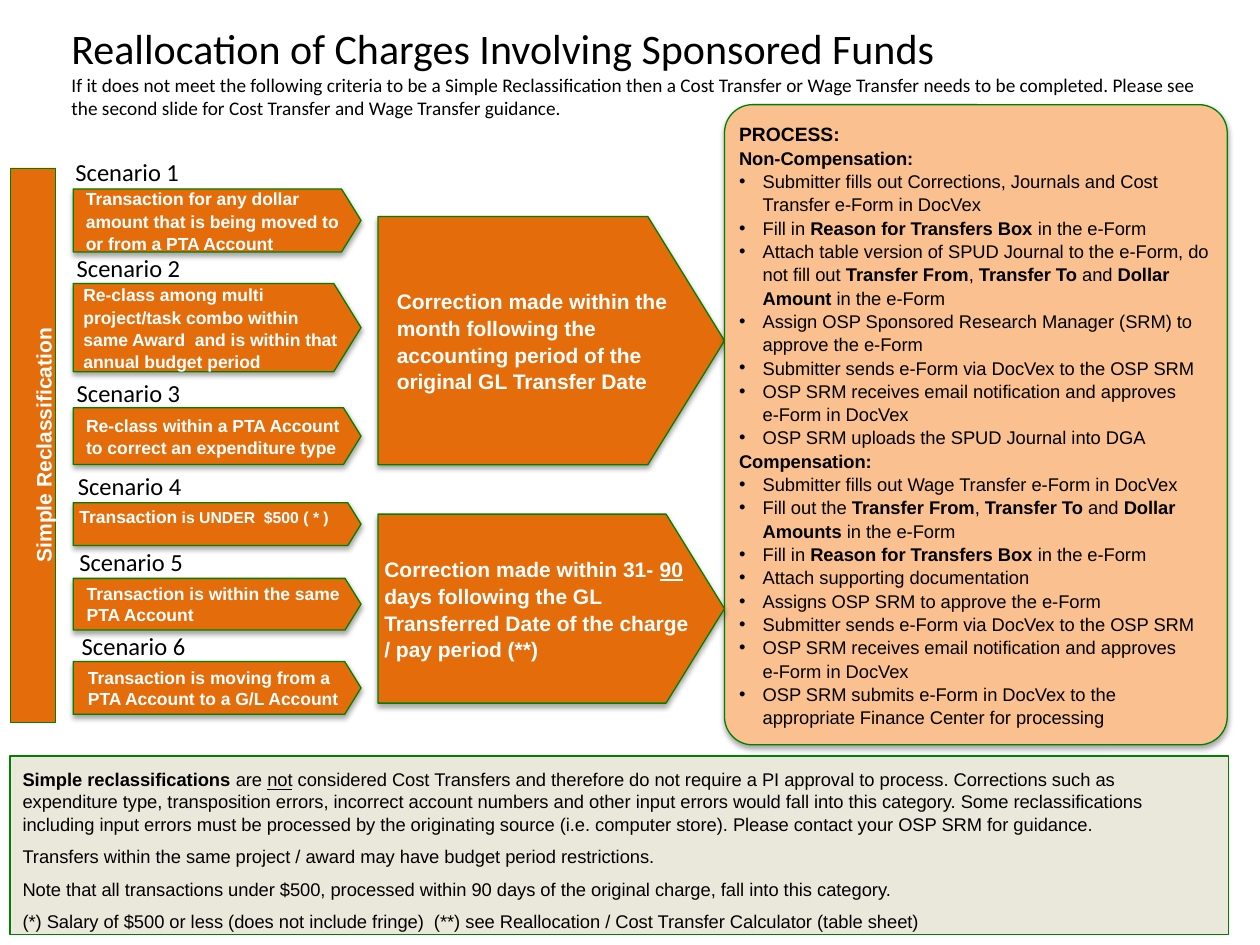
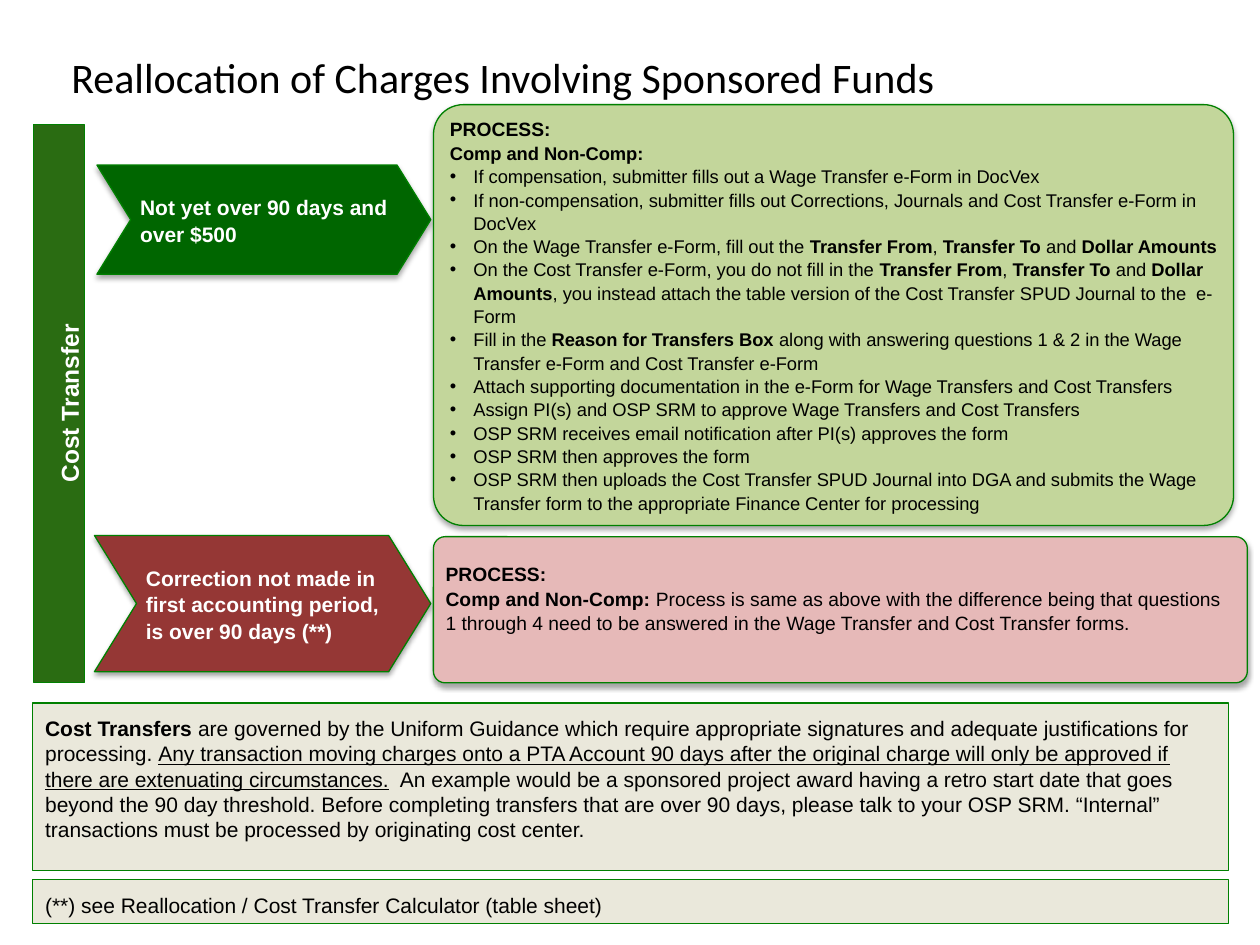
from lxml import etree
from pptx import Presentation
from pptx.dml.color import RGBColor
from pptx.enum.shapes import MSO_SHAPE
from pptx.enum.text import MSO_ANCHOR, PP_ALIGN
from pptx.oxml.ns import qn
from pptx.util import Pt

RECT, ROUNDED = MSO_SHAPE.RECTANGLE, MSO_SHAPE.ROUNDED_RECTANGLE
PENTAGON, CHEVRON = MSO_SHAPE.PENTAGON, MSO_SHAPE.CHEVRON
TOP, MIDDLE = MSO_ANCHOR.TOP, MSO_ANCHOR.MIDDLE
CENTER, LEFT = PP_ALIGN.CENTER, PP_ALIGN.LEFT

COLORS = {
    "text": "000000", "white": "FFFFFF", "outline": "008000",
    "orange": "E46C0A", "peach": "FAC090", "note": "DDD9C3",
    "band_green": "2A6C12", "arrow_green": "006600", "light_green": "C3D69B",
    "dark_red": "953735", "pink": "E6B9B8",
}
TITLE = "Reallocation of Charges Involving Sponsored Funds"
TITLE_NOTE = (
    "If it does not meet the following criteria to be a Simple Reclassification then a Cost "
    "Transfer or Wage Transfer needs to be completed. Please see the second slide for Cost "
    "Transfer and Wage Transfer guidance."
)
BODY_SPACING = 1.06
ARROW_POINT = 0.309
BULLET_INDENT = 13.5

# label left, label top, arrow top, arrow height, line spacing, arrow text
SCENARIOS = [
    (36, 86.4, 108, 36, BODY_SPACING,
     "Transaction for any dollar amount that is being moved to or from a PTA Account"),
    (36.7, 141.1, 162, 50.4, BODY_SPACING,
     "Re-class among multi project/task combo within same Award  and is within that "
     "annual budget period"),
    (36.7, 212.4, 233, 32.4, BODY_SPACING,
     "Re-class within a PTA Account to correct an expenditure type"),
    (37.4, 265.7, 287.3, 24.5, BODY_SPACING, "Transaction"),
    (38.2, 308.9, 330.5, 29.5, 1, "Transaction is within the same PTA Account"),
    (39.6, 357.1, 378, 30.2, 1, "Transaction is moving from a PTA Account to a G/L Account"),
]
SIMPLE_PROCESS = [
    "|PROCESS:|",
    "|Non-Compensation:|",
    "•Submitter fills out Corrections, Journals and Cost Transfer e-Form in DocVex",
    "•Fill in |Reason for Transfers Box |in the e-Form",
    "•Attach table version of SPUD Journal to the e-Form, do not fill out |Transfer From|, "
    "|Transfer To |and |Dollar Amount |in the e-Form",
    "•Assign OSP Sponsored Research Manager (SRM) to approve the e-Form",
    "•Submitter sends e-Form via DocVex to the OSP SRM",
    "•OSP SRM receives email notification and approves\ne-Form in DocVex",
    "•OSP SRM uploads the SPUD Journal into DGA",
    "|Compensation:|",
    "•Submitter fills out Wage Transfer e-Form in DocVex",
    "•Fill out the |Transfer From|, |Transfer To |and |Dollar Amounts| in the e-Form",
    "•Fill in |Reason for Transfers Box |in the e-Form",
    "•Attach supporting documentation",
    "•Assigns OSP SRM to approve the e-Form",
    "•Submitter sends e-Form via DocVex to the OSP SRM",
    "•OSP SRM receives email notification and approves\ne-Form in DocVex",
    "•OSP SRM submits e-Form in DocVex to the appropriate Finance Center for processing",
]
SIMPLE_NOTES = [
    "|Simple reclassifications |are _not_ considered Cost Transfers and therefore do not require "
    "a PI approval to process. Corrections such as expenditure type, transposition errors, "
    "incorrect account numbers and other input errors would fall into this category. Some "
    "reclassifications including input errors must be processed by the originating source "
    "(i.e. computer store). Please contact your OSP SRM for guidance.",
    "Transfers within the same project / award may have budget period restrictions.",
    "Note that all transactions under $500, processed within 90 days of the original charge, "
    "fall into this category.",
    "(*) Salary of $500 or less (does not include fringe)  (**) see Reallocation / Cost Transfer "
    "Calculator (table sheet)",
]
TRANSFER_PROCESS = [
    "|PROCESS:|",
    "|Comp and Non-Comp:|",
    "•If compensation, submitter fills out a Wage Transfer e-Form in DocVex",
    "•If non-compensation, submitter fills out Corrections, Journals and Cost Transfer e-Form "
    "in DocVex",
    "•On the Wage Transfer e-Form, fill out the |Transfer From|, |Transfer To |and "
    "|Dollar Amounts|",
    "•On the Cost Transfer e-Form, you do not fill in the |Transfer From|, |Transfer To |and "
    "|Dollar Amounts|, you instead attach the table version of the Cost Transfer SPUD Journal "
    "to the  e-Form",
    "•Fill in the |Reason for Transfers Box |along with answering questions 1 & 2 in the Wage "
    "Transfer e-Form and Cost Transfer e-Form",
    "•Attach supporting documentation in the e-Form for Wage Transfers and Cost Transfers",
    "•Assign PI(s) and OSP SRM to approve Wage Transfers and Cost Transfers",
    "•OSP SRM receives email notification after PI(s) approves the form",
    "•OSP SRM then approves the form",
    "•OSP SRM then uploads the Cost Transfer SPUD Journal into DGA and submits the Wage "
    "Transfer form to the appropriate Finance Center for processing",
]
LATE_PROCESS = [
    "|PROCESS:|",
    "|Comp and Non-Comp: |Process is same as above with the difference being that questions\n"
    "1 through 4 need to be answered in the Wage Transfer and Cost Transfer forms.",
]
TRANSFER_NOTES = [
    "|Cost Transfers |are governed by the Uniform Guidance which require appropriate signatures "
    "and adequate justifications for processing. _Any transaction moving charges onto a PTA "
    "Account 90 days after the original charge will only be approved if there are extenuating "
    "circumstances._  An example would be a sponsored project award having a retro start date "
    "that goes beyond the 90 day threshold. Before completing transfers that are over 90 days, "
    "please talk to your OSP SRM. “Internal” transactions must be processed by originating "
    "cost center.",
]


def rgb(name):
    return RGBColor.from_string(COLORS[name])


def add_runs(paragraph, text):
    """Marks in text: |bold|, _underlined_, newline for a line break."""
    for i, weighted in enumerate(text.split("|")):
        for j, piece in enumerate(weighted.split("_")):
            for k, line in enumerate(piece.split("\n")):
                if k:
                    paragraph.add_line_break()
                if line:
                    run = paragraph.add_run()
                    run.text = line
                    if i % 2:
                        run.font.bold = True
                    if j % 2:
                        run.font.underline = True


def add_bullet(paragraph):
    properties = paragraph._p.get_or_add_pPr()
    properties.set("marL", str(Pt(BULLET_INDENT)))
    properties.set("indent", str(-Pt(BULLET_INDENT)))
    etree.SubElement(properties, qn("a:buFont"), typeface="Arial")
    etree.SubElement(properties, qn("a:buChar"), char="•")


def write(frame, texts, size, color="text", font="Arial", bold=None, spacing=1.0,
          after=0, align=LEFT):
    frame.word_wrap = True
    for index, text in enumerate(texts):
        paragraph = frame.add_paragraph() if index else frame.paragraphs[0]
        paragraph.alignment = align
        paragraph.line_spacing = spacing
        paragraph.space_after = Pt(after)
        if text.startswith("•"):
            add_bullet(paragraph)
        paragraph.font.size = Pt(size)
        paragraph.font.name = font
        paragraph.font.bold = bold
        paragraph.font.color.rgb = rgb(color)
        add_runs(paragraph, text.lstrip("•"))


def set_margins(frame, left, top, right, bottom):
    frame.margin_left, frame.margin_top = Pt(left), Pt(top)
    frame.margin_right, frame.margin_bottom = Pt(right), Pt(bottom)


def add_panel(slide, kind, box, fill, line_width=0.75, corner=None, shadow=False):
    panel = slide.shapes.add_shape(kind, *map(Pt, box))
    if corner is not None:
        panel.adjustments[0] = corner
    panel.fill.solid()
    panel.fill.fore_color.rgb = rgb(fill)
    panel.line.color.rgb = rgb("outline")
    panel.line.width = Pt(line_width)
    panel.shadow.inherit = False
    if shadow:
        effects = panel._element.spPr.find(qn("a:effectLst"))
        outer = etree.SubElement(effects, qn("a:outerShdw"), blurRad=str(Pt(3.1)),
                                 dist=str(Pt(1.8)), dir="5400000", rotWithShape="0")
        tint = etree.SubElement(outer, qn("a:srgbClr"), val=COLORS["text"])
        etree.SubElement(tint, qn("a:alpha"), val="35000")
    panel.text_frame.vertical_anchor = MIDDLE
    set_margins(panel.text_frame, 3.6, 3.6, 3.6, 3.6)
    return panel


def center_block(frame):
    """Centre the left-aligned lines as one block."""
    frame._txBody.bodyPr.set("anchorCtr", "1")


def add_title(slide, top, height, note=None):
    frame = slide.shapes.add_textbox(Pt(33.8), Pt(top), Pt(657.4), Pt(height)).text_frame
    set_margins(frame, 7.2, 0, 7.2, 0)
    frame.vertical_anchor = MIDDLE
    write(frame, [TITLE, note] if note else [TITLE], 24, font="Calibri")
    if note:
        frame.paragraphs[1].font.size = Pt(11)


def add_side_band(slide, box, text, fill, size):
    frame = add_panel(slide, RECT, box, fill, line_width=0.25).text_frame
    set_margins(frame, 14.4, 3.6, 7.2, 3.6)
    write(frame, [text], size, "white", bold=True, spacing=BODY_SPACING, align=CENTER)
    frame._txBody.bodyPr.set("vert", "vert270")


def add_arrow(slide, kind, box, text, fill="orange", size=12, spacing=BODY_SPACING):
    arrow = add_panel(slide, kind, box, fill, corner=ARROW_POINT, shadow=True)
    write(arrow.text_frame, [text], size, "white", bold=True, spacing=spacing)
    center_block(arrow.text_frame)
    return arrow


def add_process(slide, box, texts, fill, corner, size=10.5):
    frame = add_panel(slide, ROUNDED, box, fill, corner=corner, shadow=True).text_frame
    write(frame, texts, size, spacing=BODY_SPACING)
    frame.paragraphs[0].font.size = Pt(11)
    return frame


def add_note(slide, box, texts, size):
    note = add_panel(slide, RECT, box, "note")
    color = note._element.spPr.find(qn("a:solidFill"))[0]
    etree.SubElement(color, qn("a:alpha"), val="60000")
    frame = note.text_frame
    set_margins(frame, 7.2, 7.2, 7.2, 7.2)
    frame.vertical_anchor = TOP
    write(frame, texts, size, after=6)


def add_scenarios(slide, left, width):
    for number, scenario in enumerate(SCENARIOS, 1):
        label_left, label_top, top, height, spacing, text = scenario
        arrow = add_arrow(slide, PENTAGON, (left, top, width, height), text,
                          size=10, spacing=spacing)
        if number == 4:
            limit = arrow.text_frame.paragraphs[0].add_run()
            limit.text = " is UNDER  $500 ( * )"
            limit.font.size = Pt(9)
            arrow.text_frame.vertical_anchor = TOP
            arrow.text_frame.margin_top = Pt(1)
            arrow.text_frame._txBody.bodyPr.set("anchorCtr", "0")
        label = slide.shapes.add_textbox(Pt(label_left), Pt(label_top), Pt(110), Pt(24.5))
        write(label.text_frame, [f"Scenario {number}"], 14, font="Calibri")


def build_simple_reclassification(slide):
    add_title(slide, 12.6, 56, TITLE_NOTE)
    add_side_band(slide, (5.8, 96, 26, 316.8), "Simple Reclassification", "orange", 12)
    add_arrow(slide, PENTAGON, (216, 123.8, 198, 141.8),
              "Correction made within the month following the accounting period of the "
              "original GL Transfer Date")
    add_process(slide, (414, 59.8, 287.3, 365.8), SIMPLE_PROCESS, "peach", 0.056)
    add_arrow(slide, PENTAGON, (216, 293.8, 198, 108),
              "Correction made within 31- _90_ days following the GL Transferred Date of the "
              "charge / pay period (**)")
    add_note(slide, (5.8, 432, 696.2, 102.2), SIMPLE_NOTES, 10.5)
    add_scenarios(slide, 41.8, 164.5)


def build_cost_transfer(slide):
    add_title(slide, 30.2, 27.4)
    add_note(slide, (18.7, 502.6, 683.3, 25.2),
             ["(**) see Reallocation / Cost Transfer Calculator (table sheet)"], 12)
    add_side_band(slide, (19.2, 71.3, 28.8, 318.5), "Cost Transfer", "band_green", 14)
    add_arrow(slide, CHEVRON, (55.4, 94.3, 190.8, 62.4),
              "Not yet over 90 days and over $500", "arrow_green")
    add_arrow(slide, CHEVRON, (54, 306, 192.2, 77.8),
              "Correction not made in first accounting period, is over 90 days (**)", "dark_red")
    process = add_process(slide, (247.7, 59.8, 457.2, 240.5), TRANSFER_PROCESS,
                          "light_green", 0.071)
    center_block(process)
    late_process = add_process(slide, (247.7, 306.7, 465.1, 83.5), LATE_PROCESS, "pink",
                               0.08, size=11)
    set_margins(late_process, 5, 3.6, 3.6, 17)
    add_note(slide, (18.7, 401.8, 683.3, 95.8), TRANSFER_NOTES, 12)


def main():
    deck = Presentation()
    deck.slide_width, deck.slide_height = Pt(720), Pt(540)
    for build in (build_simple_reclassification, build_cost_transfer):
        build(deck.slides.add_slide(deck.slide_layouts[6]))
    deck.save("out.pptx")


if __name__ == "__main__":
    main()
